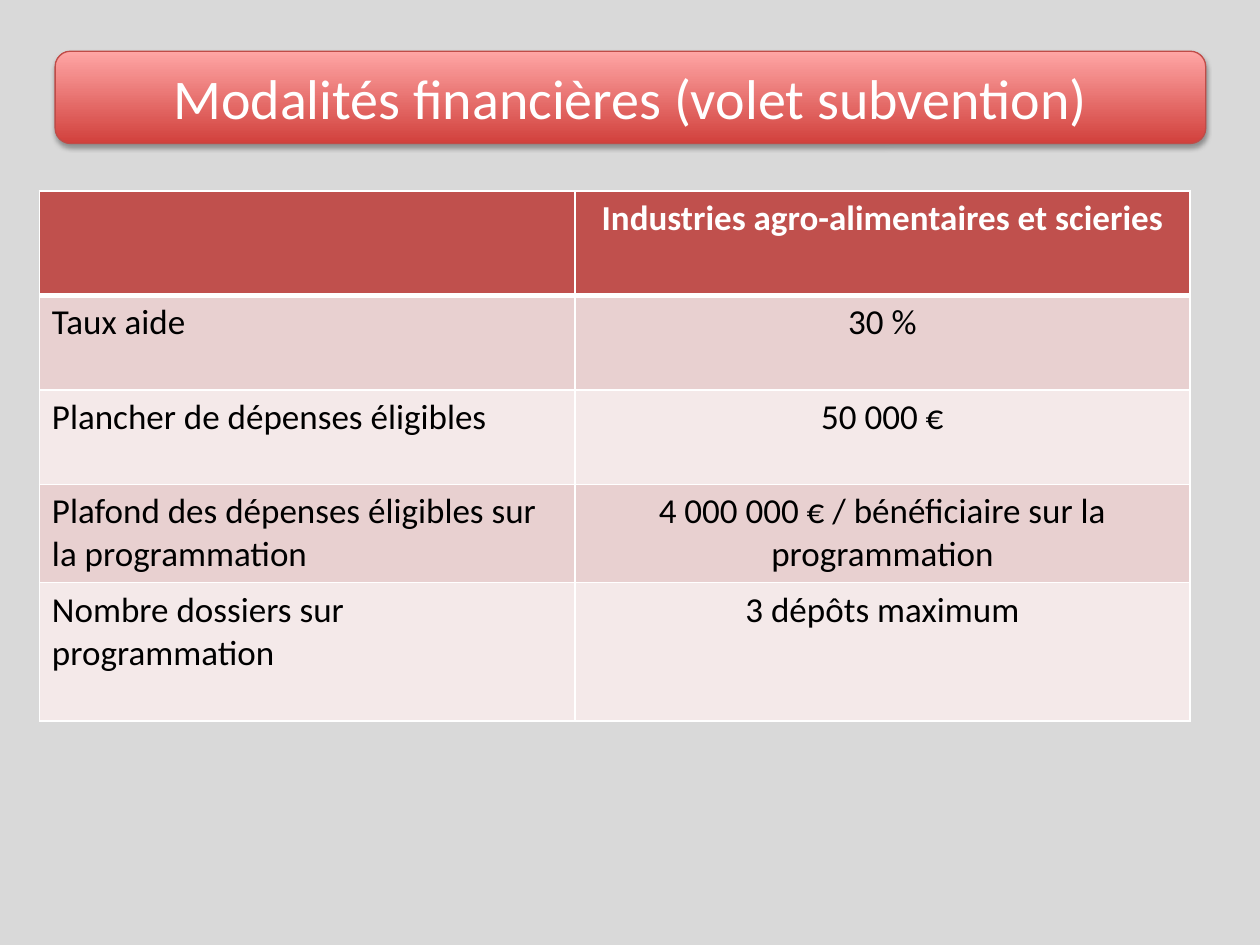
from typing import NamedTuple

from lxml import etree
from pptx import Presentation
from pptx.dml.color import RGBColor
from pptx.enum.shapes import MSO_SHAPE
from pptx.enum.text import MSO_ANCHOR, PP_ALIGN
from pptx.oxml.ns import qn
from pptx.util import Pt

ROUNDED = MSO_SHAPE.ROUNDED_RECTANGLE
LEFT, CENTER = PP_ALIGN.LEFT, PP_ALIGN.CENTER
MIDDLE = MSO_ANCHOR.MIDDLE

FONT = "Calibri"
COLORS = {
    "page": "D9D9D9",
    "banner_bottom": "D1403C",
    "banner_top": "FFA6A5",
    "banner_line": "BF4C48",
    "header": "C0504D",
    "band_dark": "E8D0D0",
    "band_light": "F4E9E9",
    "white": "FFFFFF",
    "black": "000000",
}


class Row(NamedTuple):
    label: str
    value: str
    height: float


ROWS = [
    Row("", "Industries agro-alimentaires et scieries", 59.5),
    Row("Taux aide", "30 %", 54),
    Row("Plancher de dépenses éligibles", "50 000 €", 54),
    Row("Plafond des dépenses éligibles sur la programmation",
        "4 000 000 € / bénéficiaire sur la programmation", 54.5),
    Row("Nombre dossiers sur programmation", "3 dépôts maximum", 79),
]
COLUMN_WIDTHS = (306, 351.5)


def rgb(name: str) -> RGBColor:
    return RGBColor.from_string(COLORS[name])


def write(para, text: str, size: float, color: str, align, bold: bool = False) -> None:
    para.alignment = align
    span = para.add_run()
    span.text = text
    font = span.font
    font.name, font.size, font.bold = FONT, Pt(size), bold
    font.color.rgb = rgb(color)


def add_shadow(shape) -> None:
    shape.shadow.inherit = False
    effects = shape._element.spPr.find(qn("a:effectLst"))
    shadow = etree.SubElement(effects, qn("a:outerShdw"), blurRad=str(Pt(3.1)),
                              dist=str(Pt(1.8)), dir="5400000", rotWithShape="0")
    color = etree.SubElement(shadow, qn("a:srgbClr"), val=COLORS["black"])
    etree.SubElement(color, qn("a:alpha"), val="35000")


def add_banner(page, text: str) -> None:
    banner = page.shapes.add_shape(ROUNDED, Pt(31.5), Pt(29.25), Pt(657.5), Pt(52.75))
    banner.fill.gradient()
    banner.fill.gradient_angle = 90
    for stop, name in zip(banner.fill.gradient_stops, ("banner_bottom", "banner_top")):
        stop.color.rgb = rgb(name)
    banner.line.color.rgb = rgb("banner_line")
    banner.line.width = Pt(0.75)
    add_shadow(banner)
    frame = banner.text_frame
    frame.word_wrap = True
    frame.vertical_anchor = MIDDLE
    write(frame.paragraphs[0], text, 32, "white", CENTER)


def add_borders(cell, top: float, bottom: float) -> None:
    properties = cell._tc.get_or_add_tcPr()
    for side, width in (("L", 1), ("R", 1), ("T", top), ("B", bottom)):
        line = etree.SubElement(properties, qn(f"a:ln{side}"), w=str(Pt(width)))
        fill = etree.SubElement(line, qn("a:solidFill"))
        etree.SubElement(fill, qn("a:srgbClr"), val=COLORS["white"])


def add_terms_table(page, rows: list[Row]) -> None:
    frame = page.shapes.add_table(len(rows), len(COLUMN_WIDTHS), Pt(22.5), Pt(109.25),
                                  Pt(sum(COLUMN_WIDTHS)), Pt(sum(row.height for row in rows)))
    table = frame.table
    for column, width in zip(table.columns, COLUMN_WIDTHS):
        column.width = Pt(width)
    for index, row in enumerate(rows):
        table.rows[index].height = Pt(row.height)
        header = index == 0
        band = "header" if header else "band_dark" if index % 2 else "band_light"
        for column, (text, align) in enumerate(((row.label, LEFT), (row.value, CENTER))):
            cell = table.cell(index, column)
            # The rule under the header is heavier than the others
            add_borders(cell, top=3 if index == 1 else 1, bottom=3 if header else 1)
            cell.fill.solid()
            cell.fill.fore_color.rgb = rgb(band)
            if text:
                write(cell.text_frame.paragraphs[0], text, 20,
                      "white" if header else "black", align, bold=header)


def main() -> None:
    deck = Presentation()
    deck.slide_width, deck.slide_height = Pt(720), Pt(540)
    page = deck.slides.add_slide(deck.slide_layouts[6])
    page.background.fill.solid()
    page.background.fill.fore_color.rgb = rgb("page")

    # Title banner
    add_banner(page, "Modalités financières (volet subvention)")
    # Funding terms
    add_terms_table(page, ROWS)

    deck.save("out.pptx")


if __name__ == "__main__":
    main()
